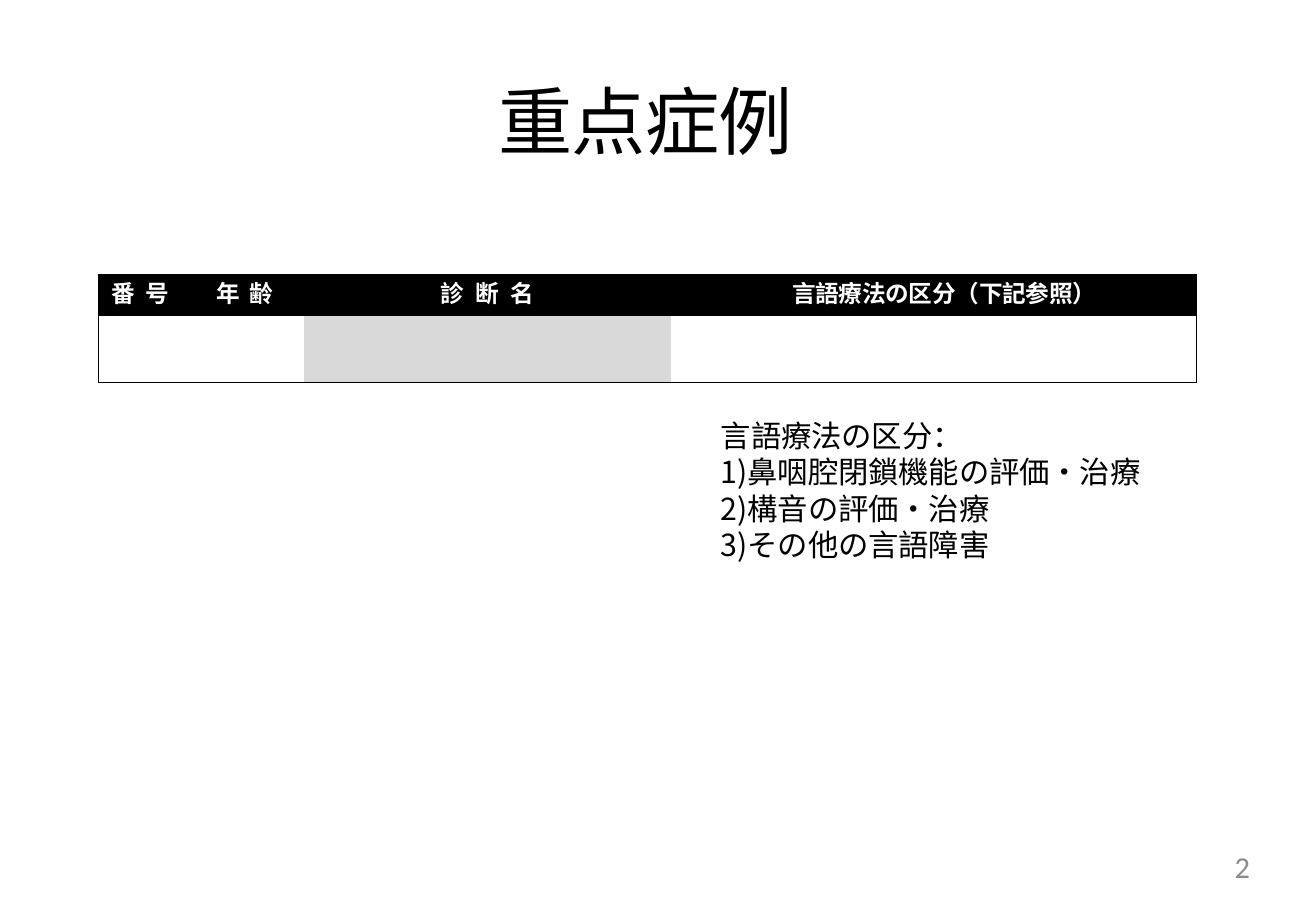
import pptx
import pptx.dml.color
import pptx.enum.text
import pptx.util
from lxml import etree
from pptx.oxml.ns import qn

Cm = pptx.util.Cm
Pt = pptx.util.Pt
RGBColor = pptx.dml.color.RGBColor
ALIGN = pptx.enum.text.PP_ALIGN

BLACK = RGBColor(0x00, 0x00, 0x00)
WHITE = RGBColor(0xFF, 0xFF, 0xFF)
LIGHT_GRAY = RGBColor(0xD9, 0xD9, 0xD9)
NUMBER_GRAY = RGBColor(0x8C, 0x8C, 0x8C)
JAPANESE_FONT = "Noto Sans CJK JP"
LINE_HEIGHT = 1.2


def write_text(paragraph, text, size=18, font=JAPANESE_FONT, color=BLACK, bold=False,
               align=ALIGN.LEFT, tracking=0, before=0, indent=0):
    paragraph.alignment = align
    paragraph.space_before = Pt(before)
    paragraph.line_spacing = Pt(size * LINE_HEIGHT)
    paragraph._p.get_or_add_pPr().set("marL", str(Cm(indent)))
    run = paragraph.add_run()
    run.text = text
    run.font.size = Pt(size)
    run.font.name = font
    run.font.bold = bold
    run.font.color.rgb = color
    properties = run._r.get_or_add_rPr()
    properties.set("spc", str(round(tracking * 100)))
    etree.SubElement(properties, qn("a:ea")).set("typeface", font)


class SlideBuilder:
    def __init__(self, presentation):
        self.slide = presentation.slides.add_slide(presentation.slide_layouts[6])

    def text_box(self, left, top, width, height, lines, before=0, **style):
        shape = self.slide.shapes.add_textbox(Cm(left), Cm(top), Cm(width), Cm(height))
        frame = shape.text_frame
        frame.word_wrap = True
        frame.margin_left = frame.margin_right = frame.margin_bottom = 0
        frame.margin_top = Cm(0.03)
        for index, line in enumerate(lines):
            paragraph = frame.add_paragraph() if index else frame.paragraphs[0]
            write_text(paragraph, line, before=0 if index else before, **style)

    def table(self, left, top, widths, heights):
        shape = self.slide.shapes.add_table(
            len(heights), len(widths), Cm(left), Cm(top), Cm(sum(widths)), Cm(sum(heights)))
        table = shape.table
        table.horz_banding = False
        for column, width in zip(table.columns, widths):
            column.width = Cm(width)
        for row, height in zip(table.rows, heights):
            row.height = Cm(height)
        return table

    def cell(self, cell, fill=None, borders=""):
        properties = cell._tc.get_or_add_tcPr()
        for side in "LRTB":
            line = etree.SubElement(properties, qn(f"a:ln{side}"), w=str(Pt(0.75)))
            if side in borders:
                solid = etree.SubElement(line, qn("a:solidFill"))
                etree.SubElement(solid, qn("a:srgbClr"), val=str(BLACK))
            else:
                etree.SubElement(line, qn("a:noFill"))
        if fill is None:
            cell.fill.background()
        else:
            cell.fill.solid()
            cell.fill.fore_color.rgb = fill
        cell.margin_left = cell.margin_right = cell.margin_bottom = 0
        cell.margin_top = Cm(0.13)


def main():
    presentation = pptx.Presentation()
    presentation.slide_width = Cm(27.51)
    presentation.slide_height = Cm(19.05)
    builder = SlideBuilder(presentation)

    # Title
    builder.text_box(10.39, 1.55, 6.27, 1.93, ["重点症例"],
                     size=44, tracking=-0.5, before=0.9, indent=0.03)

    # Case table: header text, alignment, indent, tracking, body fill
    columns = [
        ("番 号", ALIGN.LEFT, 0.28, 1.4, None),
        ("年 齢", ALIGN.LEFT, 0.48, 1.4, None),
        ("診 断 名", ALIGN.CENTER, 0, 1.8, LIGHT_GRAY),
        ("言語療法の区分（下記参照）", ALIGN.LEFT, 2.54, -0.2, None),
    ]
    table = builder.table(2.06, 5.74, [1.98, 2.31, 7.67, 11], [0.86, 1.4])
    outer_sides = ["L", "", "", "R"]
    for index, (header, align, indent, tracking, body_fill) in enumerate(columns):
        header_cell = table.cell(0, index)
        builder.cell(header_cell, BLACK, outer_sides[index])
        write_text(header_cell.text_frame.paragraphs[0], header, size=14, color=WHITE,
                   bold=True, align=align, tracking=tracking, before=3.4, indent=indent)
        builder.cell(table.cell(1, index), body_fill, outer_sides[index] + "B")

    # Therapy categories
    builder.text_box(15.04, 8.69, 9.55, 3.12, [
        "言語療法の区分：",
        "1)鼻咽腔閉鎖機能の評価・治療",
        "2)構音の評価・治療",
        "3)その他の言語障害",
    ], tracking=-0.1, before=1, indent=0.03)

    # Page number
    builder.text_box(19.81, 17.7, 6.32, 0.97, ["2"],
                     font="Calibri", color=NUMBER_GRAY, align=ALIGN.RIGHT)

    presentation.save("out.pptx")


if __name__ == "__main__":
    main()
